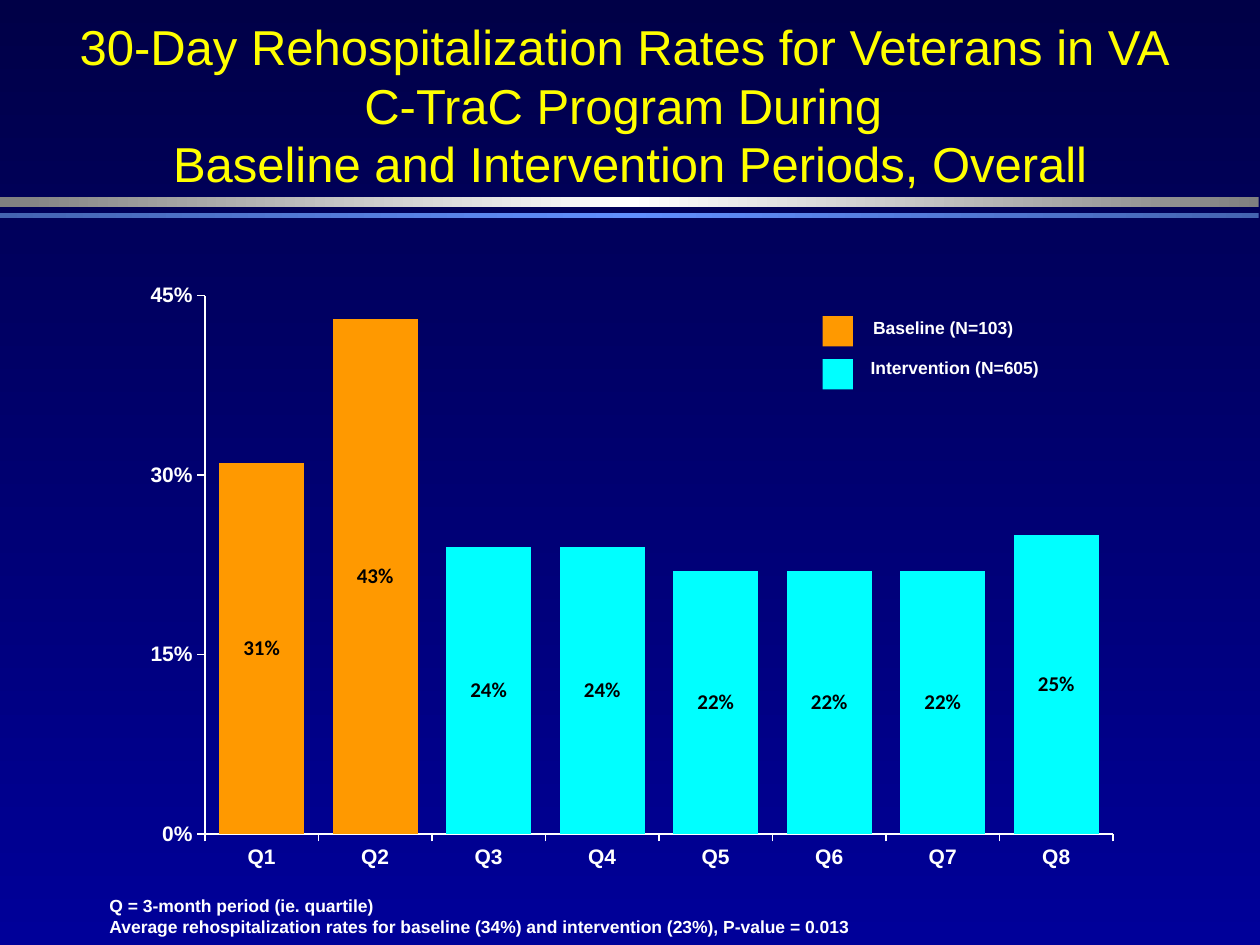
from dataclasses import dataclass

from lxml.etree import SubElement
from pptx import Presentation
from pptx.chart.data import CategoryChartData
from pptx.dml.color import RGBColor as RGB
from pptx.enum.chart import XL_CHART_TYPE as ChartType
from pptx.enum.chart import XL_LABEL_POSITION as LabelPos
from pptx.enum.chart import XL_TICK_MARK as Tick
from pptx.enum.shapes import MSO_SHAPE as Shape
from pptx.enum.text import MSO_ANCHOR as Anchor
from pptx.enum.text import PP_ALIGN as Align
from pptx.oxml.ns import qn
from pptx.util import Inches, Pt


@dataclass(frozen=True)
class Theme:
    """Colours, fonts and type sizes of the slide."""
    title: str = "FFFF00"
    text: str = "FFFFFF"
    label: str = "000000"
    baseline: str = "FF9900"
    intervention: str = "00FFFF"
    backdrop: tuple = ((0, "000047"), (100, "000099"))
    silver: tuple = ((0, "808080"), (50, "FFFFFF"), (100, "808080"))
    blue: tuple = ((0, "4464B1"), (50, "618FFD"), (100, "4464B1"))
    font: str = "Arial"
    label_font: str = "Calibri"
    title_size: int = 28
    axis_size: int = 12
    note_size: int = 10


T = Theme()
TITLE = ("30-Day Rehospitalization Rates for Veterans in VA \v"
         "C-TraC Program During \vBaseline and Intervention Periods, Overall")
NOTES = ("Q = 3-month period (ie. quartile)",
         "Average rehospitalization rates for baseline (34%) and "
         "intervention (23%), P-value = 0.013")
RATES = (0.31, 0.43, 0.24, 0.24, 0.22, 0.22, 0.22, 0.25)
BASELINE_QUARTERS = 2
PLOT = {"x": 0.101, "y": 0.09, "w": 0.85, "h": 0.746}


def set_all(obj, values):
    """Set each named attribute of an object."""
    for name, value in values.items():
        setattr(obj, name, value)


def set_font(font, size, color, bold=True, name=T.font):
    """Give a font its face, size, weight and colour."""
    set_all(font, {"name": name, "size": Pt(size), "bold": bold})
    font.color.rgb = RGB.from_string(color)


def set_solid(fill, color):
    """Make a fill one flat colour."""
    fill.solid()
    fill.fore_color.rgb = RGB.from_string(color)


def set_gradient(fill, root, stops, angle):
    """Make a fill a linear gradient through the given stops."""
    fill.gradient()
    fill.gradient_angle = angle
    gs_lst = root.find(".//" + qn("a:gsLst"))
    for gs in list(gs_lst):
        gs_lst.remove(gs)
    for pos, color in stops:
        gs = SubElement(gs_lst, qn("a:gs"), pos=str(pos * 1000))
        SubElement(gs, qn("a:srgbClr"), val=color)


def add_box(slide, box):
    """Add a plain rectangle without line or shadow."""
    sp = slide.shapes.add_shape(Shape.RECTANGLE, *map(Inches, box))
    sp.shadow.inherit = False
    sp.line.fill.background()
    return sp


def add_text(slide, box, lines, size, color, bold=True, align=Align.LEFT,
             anchor=Anchor.TOP, inset=(0, 0), wrap=True):
    """Add a text box with one paragraph per line."""
    tf = slide.shapes.add_textbox(*map(Inches, box)).text_frame
    dx, dy = map(Inches, inset)
    set_all(tf, {"word_wrap": wrap, "vertical_anchor": anchor,
                 "margin_left": dx, "margin_right": dx,
                 "margin_top": dy, "margin_bottom": dy})
    for i, line in enumerate(lines):
        p = tf.paragraphs[0] if i == 0 else tf.add_paragraph()
        set_all(p, {"text": line, "alignment": align})
        for r in p.runs:
            set_font(r.font, size, color, bold)


def format_axis(axis, values):
    """Style an axis as a white line with outer ticks and no grid."""
    set_all(axis, {"has_major_gridlines": False,
                   "major_tick_mark": Tick.OUTSIDE,
                   "minor_tick_mark": Tick.NONE, **values})
    axis.format.line.width = Pt(1)
    set_solid(axis.format.line.fill, T.text)
    set_font(axis.tick_labels.font, T.axis_size, T.text)


def place_plot(chart):
    """Fix the inner plot area as shares of the chart's size."""
    area = chart._chartSpace.chart.plotArea
    for old in area.findall(qn("c:layout")):
        area.remove(old)
    layout = SubElement(area, qn("c:layout"))
    area.insert(0, layout)
    manual = SubElement(layout, qn("c:manualLayout"))
    modes = {"layoutTarget": "inner", "xMode": "edge", "yMode": "edge"}
    for tag, value in {**modes, **PLOT}.items():
        SubElement(manual, qn("c:" + tag), val=str(value))


def add_rate_chart(slide, box):
    """Add the column chart of quarterly rates."""
    data = CategoryChartData(number_format="0%")
    data.categories = [f"Q{n}" for n in range(1, len(RATES) + 1)]
    data.add_series("Series 1", RATES)
    chart = slide.shapes.add_chart(
        ChartType.COLUMN_CLUSTERED, *map(Inches, box), data).chart
    set_all(chart, {"has_legend": False, "has_title": False})
    set_font(chart.font, T.note_size, T.label, False, T.label_font)
    place_plot(chart)
    format_axis(chart.category_axis, {})
    format_axis(chart.value_axis, {"minimum_scale": 0, "maximum_scale": 0.45,
                                   "major_unit": 0.15})
    set_all(chart.value_axis.tick_labels,
            {"number_format": "0%", "number_format_is_linked": False})
    plot = chart.plots[0]
    set_all(plot, {"gap_width": 34, "vary_by_categories": False,
                   "has_data_labels": True})
    labels = plot.data_labels
    set_all(labels, {"show_value": True, "position": LabelPos.CENTER,
                     "number_format": "0%", "number_format_is_linked": False})
    set_font(labels.font, T.axis_size, T.label, name=T.label_font)
    for i in range(len(RATES)):
        color = T.baseline if i < BASELINE_QUARTERS else T.intervention
        set_solid(plot.series[0].points[i].format.fill, color)


def add_legend_entry(slide, swatch_top, text_at, text, color):
    """Add a colour swatch and its label."""
    set_solid(add_box(slide, (6.53, swatch_top, 0.24, 0.24)).fill, color)
    add_text(slide, (*text_at, 1.94, 0.24), [text], T.note_size, T.text,
             wrap=False)


def main():
    """Build the slide and save it."""
    prs = Presentation()
    set_all(prs, {"slide_width": Inches(10), "slide_height": Inches(7.5)})
    slide = prs.slides.add_slide(prs.slide_layouts[6])
    set_gradient(slide.background.fill, slide._element, T.backdrop, 270)
    for top, height, stops in ((1.56, 0.08, T.silver), (1.69, 0.04, T.blue)):
        sp = add_box(slide, (0, top, 9.99, height))
        set_gradient(sp.fill, sp._element, stops, 0)
    add_text(slide, (0, 0, 10, 1.61), [TITLE], T.title_size, T.title,
             bold=False, align=Align.CENTER, anchor=Anchor.BOTTOM,
             inset=(0.16, 0.08))
    add_rate_chart(slide, (0.77, 1.83, 8.48, 5.73))
    add_legend_entry(slide, 2.51, (6.93, 2.52), "Baseline (N=103)", T.baseline)
    add_legend_entry(slide, 2.85, (6.91, 2.83), "Intervention (N=605)",
                     T.intervention)
    add_text(slide, (0.77, 7.05, 8.48, 0.52), NOTES, T.note_size, T.text,
             inset=(0.1, 0.05))
    prs.save("out.pptx")


if __name__ == "__main__":
    main()
